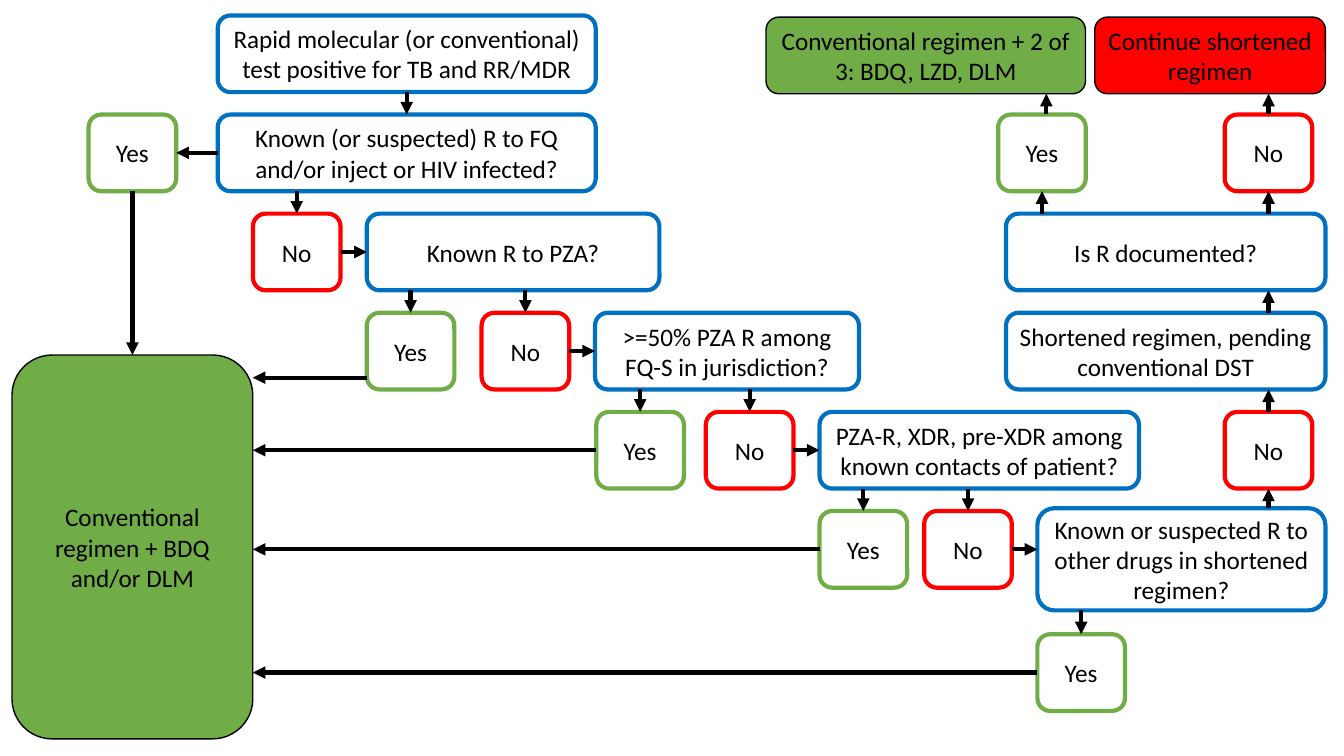
from lxml import etree
from pptx import Presentation
from pptx.dml.color import RGBColor
from pptx.enum.shapes import MSO_CONNECTOR, MSO_SHAPE
from pptx.enum.text import MSO_ANCHOR, PP_ALIGN
from pptx.oxml.ns import qn
from pptx.util import Pt

ROUNDED = MSO_SHAPE.ROUNDED_RECTANGLE
STRAIGHT = MSO_CONNECTOR.STRAIGHT
MIDDLE = MSO_ANCHOR.MIDDLE
CENTER = PP_ALIGN.CENTER

WHITE = RGBColor(0xFF, 0xFF, 0xFF)
BLACK = RGBColor(0, 0, 0)
BLUE = RGBColor(0x00, 0x70, 0xC0)
GREEN = RGBColor(0x70, 0xAD, 0x47)
RED = RGBColor(0xFF, 0x00, 0x00)

FONT = "Calibri"
TOP, LEFT, BOTTOM, RIGHT = range(4)
BOX_HEIGHT = 54.8
ANSWER_WIDTH = 62.6
FIRST_ROW = 11
ROW_PITCH = 70.8
RIGHT_EDGE = 946.8
RIGHT_NO_LEFT = 874.8


def row(index):
    return FIRST_ROW + index * ROW_PITCH


def add_box(page, text, left, top, width, height, fill, line, weight):
    box = page.shapes.add_shape(ROUNDED, Pt(left), Pt(top), Pt(width), Pt(height))
    box.shadow.inherit = False
    box.fill.solid()
    box.fill.fore_color.rgb = fill
    box.line.color.rgb = line
    box.line.width = Pt(weight)
    frame = box.text_frame
    frame.text = text
    frame.word_wrap = True
    frame.vertical_anchor = MIDDLE
    para = frame.paragraphs[0]
    para.alignment = CENTER
    for span in para.runs:
        span.font.name = FONT
        span.font.size = Pt(18)
        span.font.color.rgb = BLACK
    return box


def add_question(page, text, left, top, width, height=BOX_HEIGHT):
    return add_box(page, text, left, top, width, height, WHITE, BLUE, 3)


def add_yes(page, left, top):
    return add_box(page, "Yes", left, top, ANSWER_WIDTH, BOX_HEIGHT, WHITE, GREEN, 3)


def add_no(page, left, top):
    return add_box(page, "No", left, top, ANSWER_WIDTH, BOX_HEIGHT, WHITE, RED, 3)


def add_outcome(page, text, left, top, width, height, fill):
    return add_box(page, text, left, top, width, height, fill, BLACK, 1)


def side_middle(box, side):
    x = {LEFT: box.left, RIGHT: box.left + box.width}.get(side, box.left + box.width // 2)
    y = {TOP: box.top, BOTTOM: box.top + box.height}.get(side, box.top + box.height // 2)
    return x, y


def add_arrow(page, source, side, target, offset=None):
    target_side = (side + 2) % 4
    start, end = side_middle(source, side), side_middle(target, target_side)
    vertical = side in (TOP, BOTTOM)
    axis = 0 if vertical else 1
    if offset is not None:
        level = Pt(offset)
    elif vertical:
        level = start[0] if source.width <= target.width else end[0]
    else:
        level = start[1] if source.height <= target.height else end[1]
    if vertical:
        ends = level, start[1], level, end[1]
    else:
        ends = start[0], level, end[0], level
    arrow = page.shapes.add_connector(STRAIGHT, *ends)
    if abs(start[axis] - level) < Pt(0.5):
        arrow.begin_connect(source, side)
    if abs(end[axis] - level) < Pt(0.5):
        arrow.end_connect(target, target_side)
    arrow.line.color.rgb = BLACK
    arrow.line.width = Pt(3)
    etree.SubElement(arrow.line._get_or_add_ln(), qn("a:tailEnd"), type="triangle")
    etree.SubElement(arrow._element.spPr, qn("a:effectLst"))


def add_left_flow(page):
    rapid_test = add_question(
        page, "Rapid molecular (or conventional) test positive for TB and RR/MDR",
        155.5, row(0), 270)
    known_fq = add_question(
        page, "Known (or suspected) R to FQ and/or inject or HIV infected?",
        155.5, row(1), 270)
    known_pza = add_question(page, "Known R to PZA?", 262, row(2), 209)
    jurisdiction = add_question(
        page, ">=50% PZA R among FQ-S in jurisdiction?", 425, row(3), 188.6)
    contacts = add_question(
        page, "PZA-R, XDR, pre-XDR among known contacts of patient?",
        585.4, row(4), 228.2)
    other_drugs = add_question(
        page, "Known or suspected R to other drugs in shortened regimen?",
        741, 363, RIGHT_EDGE - 741, 73)
    conventional = add_outcome(
        page, "Conventional regimen + BDQ and/or DLM", 8.6, 253.6, 172, 274.2, GREEN)

    add_arrow(page, rapid_test, BOTTOM, known_fq)
    fq_yes = add_yes(page, 63.3, row(1))
    add_arrow(page, known_fq, LEFT, fq_yes)
    add_arrow(page, fq_yes, BOTTOM, conventional)

    steps = [
        (known_fq, 180.7, row(2), known_pza),
        (known_pza, 344, row(3), jurisdiction),
        (jurisdiction, 504.2, row(4), contacts),
        (contacts, 660.2, row(5), other_drugs),
    ]
    for question, left, top, following in steps:
        answer = add_no(page, left, top)
        add_arrow(page, question, BOTTOM, answer)
        add_arrow(page, answer, RIGHT, following)

    exits = [
        (known_pza, 262, row(3), 269.8),
        (jurisdiction, 426, row(4), None),
        (contacts, 585.4, row(5), None),
        (other_drugs, 741, 453, None),
    ]
    for question, left, top, level in exits:
        answer = add_yes(page, left, top)
        add_arrow(page, question, BOTTOM, answer)
        add_arrow(page, answer, LEFT, conventional, level)
    return other_drugs


def add_right_flow(page, other_drugs):
    wide_left, wide_width = 718.6, 228.2
    no_centre = RIGHT_NO_LEFT + ANSWER_WIDTH / 2
    drugs_no = add_no(page, RIGHT_NO_LEFT, row(4))
    pending = add_question(
        page, "Shortened regimen, pending conventional DST",
        wide_left, row(3), wide_width)
    documented = add_question(
        page, "Is R documented?", wide_left, row(2), wide_width)
    documented_yes = add_yes(page, 713, row(1))
    documented_no = add_no(page, RIGHT_NO_LEFT, row(1))
    extended = add_outcome(
        page, "Conventional regimen + 2 of 3: BDQ, LZD, DLM",
        547.2, 12.2, 228.2, BOX_HEIGHT, GREEN)
    shortened = add_outcome(
        page, "Continue shortened regimen",
        782, 12.2, RIGHT_EDGE - 782, BOX_HEIGHT, RED)

    add_arrow(page, other_drugs, TOP, drugs_no)
    add_arrow(page, drugs_no, TOP, pending)
    add_arrow(page, pending, TOP, documented, no_centre)
    add_arrow(page, documented, TOP, documented_yes)
    add_arrow(page, documented, TOP, documented_no)
    add_arrow(page, documented_yes, TOP, extended, 747.4)
    add_arrow(page, documented_no, TOP, shortened)


def main():
    deck = Presentation()
    deck.slide_width = Pt(960)
    deck.slide_height = Pt(540)
    page = deck.slides.add_slide(deck.slide_layouts[6])
    other_drugs = add_left_flow(page)
    add_right_flow(page, other_drugs)
    deck.save("out.pptx")


if __name__ == "__main__":
    main()
